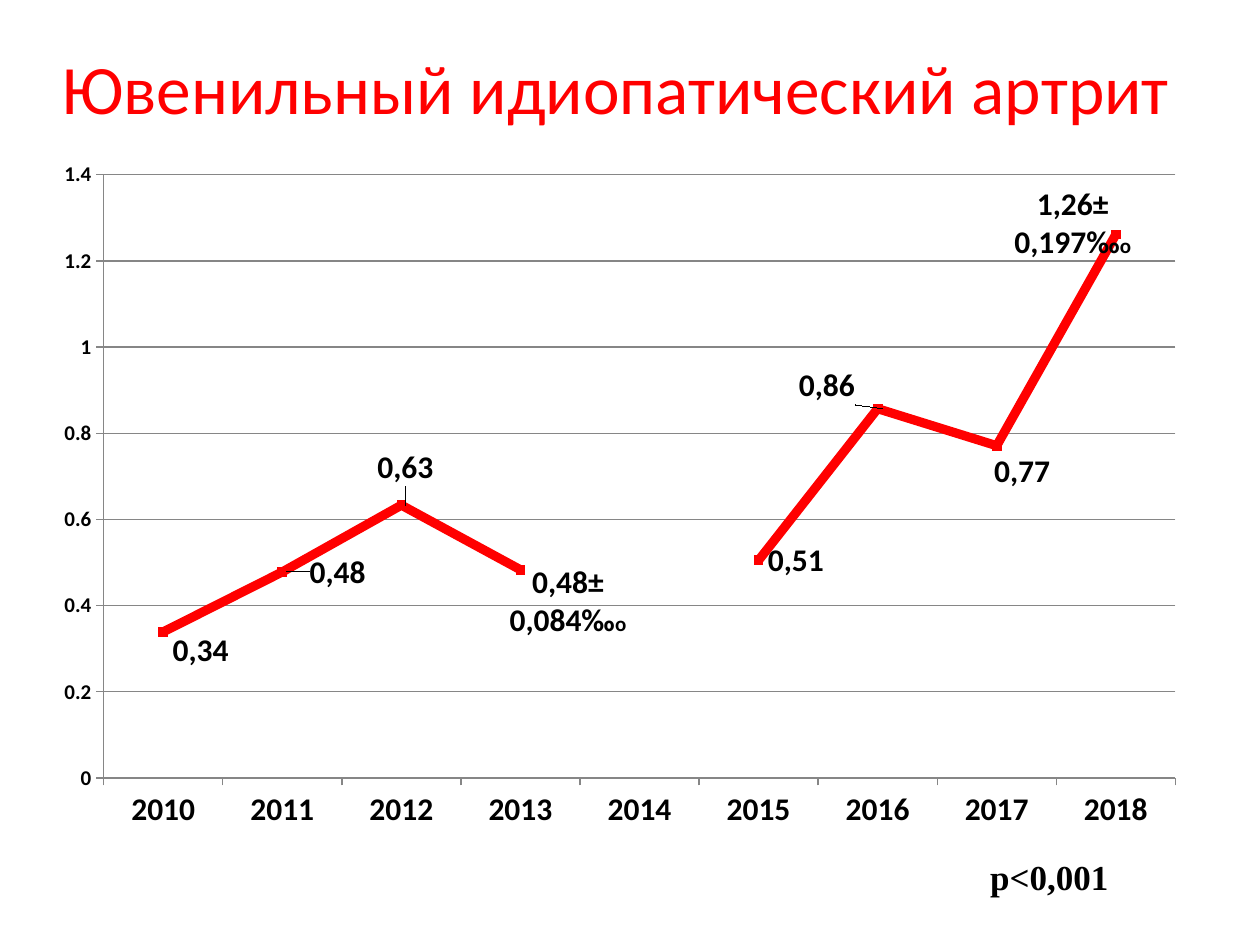
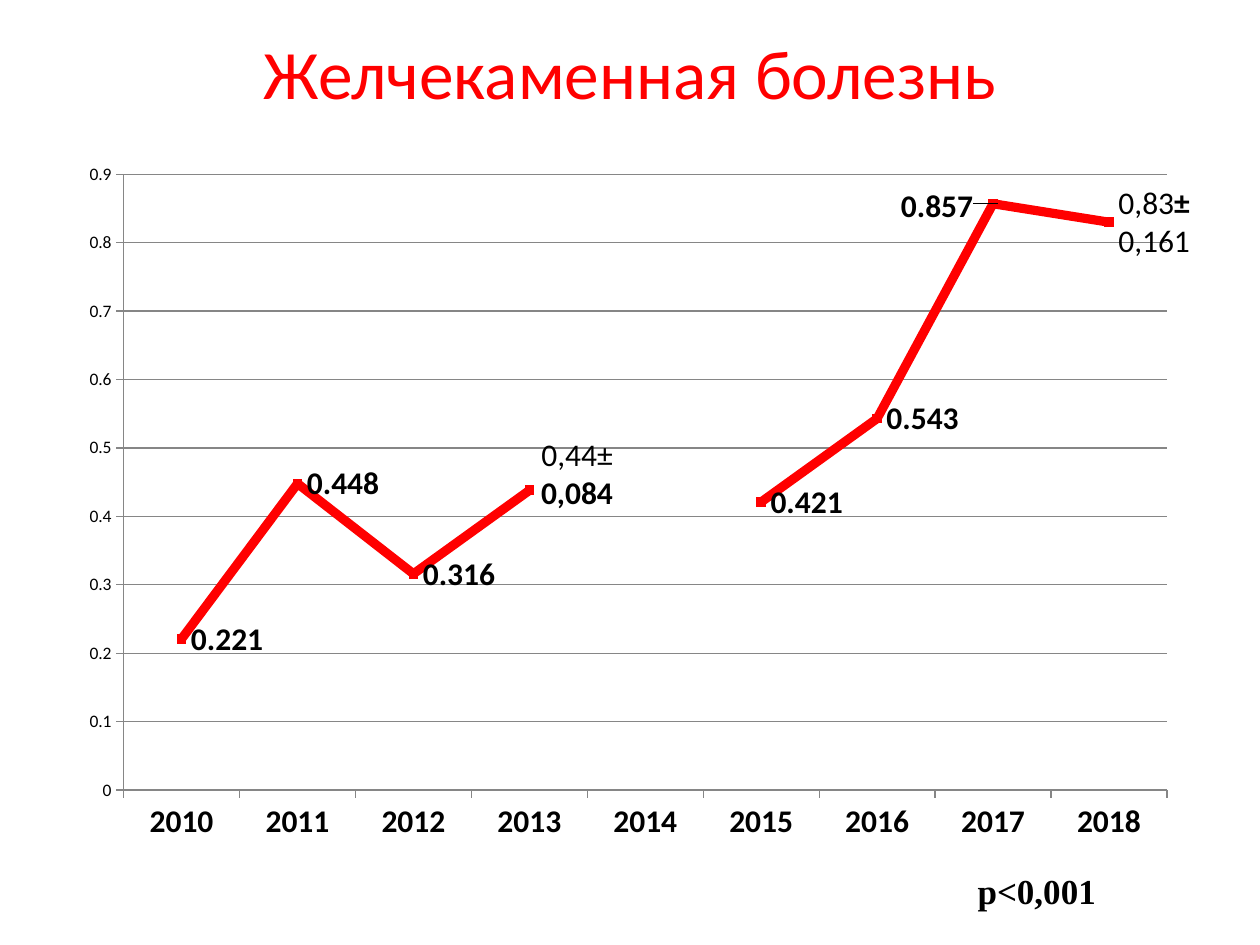
from dataclasses import dataclass, field

from lxml import etree
from pptx import Presentation
from pptx.chart.data import CategoryChartData
from pptx.dml.color import RGBColor
from pptx.enum.chart import XL_CHART_TYPE, XL_LABEL_POSITION, XL_TICK_MARK
from pptx.enum.text import MSO_ANCHOR, MSO_AUTO_SIZE, PP_ALIGN
from pptx.oxml.ns import qn
from pptx.util import Inches, Pt

LINE_CHART = XL_CHART_TYPE.LINE
RIGHT_OF_POINT = XL_LABEL_POSITION.RIGHT
TICK_OUTSIDE = XL_TICK_MARK.OUTSIDE
TICK_NONE = XL_TICK_MARK.NONE
MIDDLE = MSO_ANCHOR.MIDDLE
FIT_SHAPE = MSO_AUTO_SIZE.SHAPE_TO_FIT_TEXT
CENTER = PP_ALIGN.CENTER

SLIDE_WIDTH, SLIDE_HEIGHT = Inches(10), Inches(7.5)
COLUMN, ROW = SLIDE_WIDTH / 200, SLIDE_HEIGHT / 150
TITLE_ONLY = 5

RED, BLACK, GRAY = "FF0000", "000000", "868686"
TITLE_FONT = {"name": "Calibri", "size": Pt(39.6), "bold": False}
BASE_FONT = {"name": "Calibri", "size": Pt(10)}
LABEL_FONT = {"name": "Calibri", "size": Pt(18), "bold": True}
SIGNIFICANCE_FONT = {"name": "Times New Roman", "size": Pt(20), "bold": True}
YEARS = [str(year) for year in range(2010, 2019)]


@dataclass(frozen=True)
class Box:
    column: float
    row: float
    columns: float
    rows: float

    def lengths(self) -> dict:
        return {"left": round(self.column * COLUMN), "top": round(self.row * ROW),
                "width": round(self.columns * COLUMN), "height": round(self.rows * ROW)}


@dataclass(frozen=True)
class Part:
    text: str
    bold: bool = True
    size: float = 18


@dataclass(frozen=True)
class Label:
    shift_x: float = 0
    shift_y: float = 0
    lines: tuple = ()


@dataclass(frozen=True)
class Disease:
    title: str
    title_box: Box
    chart_box: Box
    plot_percent: tuple
    rates: tuple
    axis_max: float
    axis_step: float
    axis_font: dict
    significance_box: Box
    significance_wraps: bool
    labels: dict = field(default_factory=dict)


def one_line(text: str) -> tuple:
    return ((Part(text),),)


def per_mille(rate: str, error: str) -> tuple:
    return (Part(rate),), (Part(error), Part("о", size=12))


DISEASES = [
    Disease(
        title="Ювенильный идиопатический артрит",
        title_box=Box(5.6, 6, 184.4, 15.4),
        chart_box=Box(4, 23, 189, 110.2),
        plot_percent=(6.6, 4.3, 90, 86.9),
        rates=(0.339, 0.478, 0.633, 0.483, None, 0.505, 0.857, 0.771, 1.261),
        axis_max=1.4, axis_step=0.2,
        axis_font={"size": Pt(12), "bold": True},
        significance_box=Box(155.2, 134.8, 33.2, 8.8),
        significance_wraps=True,
        labels={
            0: Label(0, 2.6, one_line("0,34")),
            1: Label(1.5, 0, one_line("0,48")),
            2: Label(-2.8, -5.5, one_line("0,63")),
            3: Label(-1.7, 4.6, per_mille("0,48±", "0,084‰")),
            5: Label(0, 0, one_line("0,51")),
            6: Label(-7.4, -3.3, one_line("0,86")),
            7: Label(-1, 3.7, one_line("0,77")),
            8: Label(-9.3, -1.6, per_mille("1,26±", "0,197‰")),
        },
    ),
    Disease(
        title="Желчекаменная болезнь",
        title_box=Box(10, 6, 180, 10.8),
        chart_box=Box(7, 19.8, 183, 114.2),
        plot_percent=(6.9, 6.9, 90.5, 85.6),
        rates=(0.221, 0.448, 0.316, 0.438, None, 0.421, 0.543, 0.857, 0.83),
        axis_max=0.9, axis_step=0.1,
        axis_font={"size": Pt(10), "bold": False},
        significance_box=Box(153.2, 137, 23, 8.8),
        significance_wraps=False,
        labels={
            3: Label(0.2, -2.2, ((Part("0,44±", False),), (Part("0,084"),))),
            7: Label(-8.8, 0.3),
            8: Label(0, 0, ((Part("0,83", False), Part("±")), (Part("0,161", False),))),
        },
    ),
]


def apply(target, values: dict) -> None:
    for attribute, value in values.items():
        setattr(target, attribute, value)


def color(target, value: str) -> None:
    target.rgb = RGBColor.from_string(value)


def style_font(font, values: dict, value: str = BLACK) -> None:
    apply(font, values)
    color(font.color, value)


def style_line(line, value: str, width: float) -> None:
    color(line.color, value)
    line.width = Pt(width)


def manual_layout(settings: dict) -> etree.Element:
    layout = etree.Element(qn("c:layout"))
    manual = etree.SubElement(layout, qn("c:manualLayout"))
    for tag, value in settings.items():
        etree.SubElement(manual, qn(f"c:{tag}")).set("val", str(value))
    return layout


def place_plot(chart, percent: tuple) -> None:
    settings = {"layoutTarget": "inner", "xMode": "edge", "yMode": "edge"}
    settings.update(zip("xywh", (share / 100 for share in percent)))
    plot_area = chart.element.find(".//" + qn("c:plotArea"))
    for existing in plot_area.findall(qn("c:layout")):
        plot_area.remove(existing)
    plot_area.insert(0, manual_layout(settings))


def add_label(point, label: Label) -> None:
    data_label = point.data_label
    if label.lines:
        frame = data_label.text_frame
        for number, parts in enumerate(label.lines):
            paragraph = frame.add_paragraph() if number else frame.paragraphs[0]
            for part in parts:
                run = paragraph.add_run()
                run.text = part.text
                style_font(run.font, {**LABEL_FONT, "bold": part.bold, "size": Pt(part.size)})
    else:
        style_font(data_label.font, LABEL_FONT)
    data_label.position = RIGHT_OF_POINT
    shift = {"x": label.shift_x / 100, "y": label.shift_y / 100}
    data_label._get_or_add_dLbl().insert(1, manual_layout(shift))


def style_axes(chart, disease: Disease) -> None:
    apply(chart.value_axis, {"minimum_scale": 0, "maximum_scale": disease.axis_max,
                             "major_unit": disease.axis_step, "has_major_gridlines": True})
    style_line(chart.value_axis.major_gridlines.format.line, GRAY, 0.75)
    for axis, font in ((chart.category_axis, LABEL_FONT), (chart.value_axis, disease.axis_font)):
        apply(axis, {"major_tick_mark": TICK_OUTSIDE, "minor_tick_mark": TICK_NONE})
        style_font(axis.tick_labels.font, {**BASE_FONT, **font})
        style_line(axis.format.line, GRAY, 0.75)


def add_rate_chart(slide, disease: Disease) -> None:
    chart_data = CategoryChartData()
    chart_data.categories = YEARS
    chart_data.add_series("Series 1", disease.rates)
    box = disease.chart_box.lengths()
    chart = slide.shapes.add_chart(LINE_CHART, *box.values(), chart_data).chart
    apply(chart, {"has_legend": False, "has_title": False})
    style_font(chart.font, BASE_FONT)
    place_plot(chart, disease.plot_percent)
    style_axes(chart, disease)
    chart.plots[0].vary_by_categories = False

    rates = chart.plots[0].series[0]
    rates.smooth = False
    rates.marker.style = None
    style_line(rates.format.line, RED, 5.25)
    apply(rates.data_labels, {"show_value": True, "position": RIGHT_OF_POINT})
    style_font(rates.data_labels.font, LABEL_FONT)
    for index, label in disease.labels.items():
        add_label(rates.points[index], label)


def add_title(slide, disease: Disease) -> None:
    title = slide.shapes.title
    apply(title, disease.title_box.lengths())
    frame = title.text_frame
    frame.text = disease.title
    apply(frame, {"vertical_anchor": MIDDLE, "word_wrap": True})
    frame.paragraphs[0].alignment = CENTER
    style_font(frame.paragraphs[0].runs[0].font, TITLE_FONT, RED)


def add_significance(slide, disease: Disease) -> None:
    box = disease.significance_box.lengths()
    frame = slide.shapes.add_textbox(*box.values()).text_frame
    apply(frame, {"word_wrap": disease.significance_wraps, "auto_size": FIT_SHAPE})
    run = frame.paragraphs[0].add_run()
    run.text = "р<0,001"
    style_font(run.font, SIGNIFICANCE_FONT)


def main() -> None:
    presentation = Presentation()
    apply(presentation, {"slide_width": SLIDE_WIDTH, "slide_height": SLIDE_HEIGHT})
    for disease in DISEASES:
        slide = presentation.slides.add_slide(presentation.slide_layouts[TITLE_ONLY])
        add_title(slide, disease)
        add_rate_chart(slide, disease)
        add_significance(slide, disease)
    presentation.save("out.pptx")


if __name__ == "__main__":
    main()
